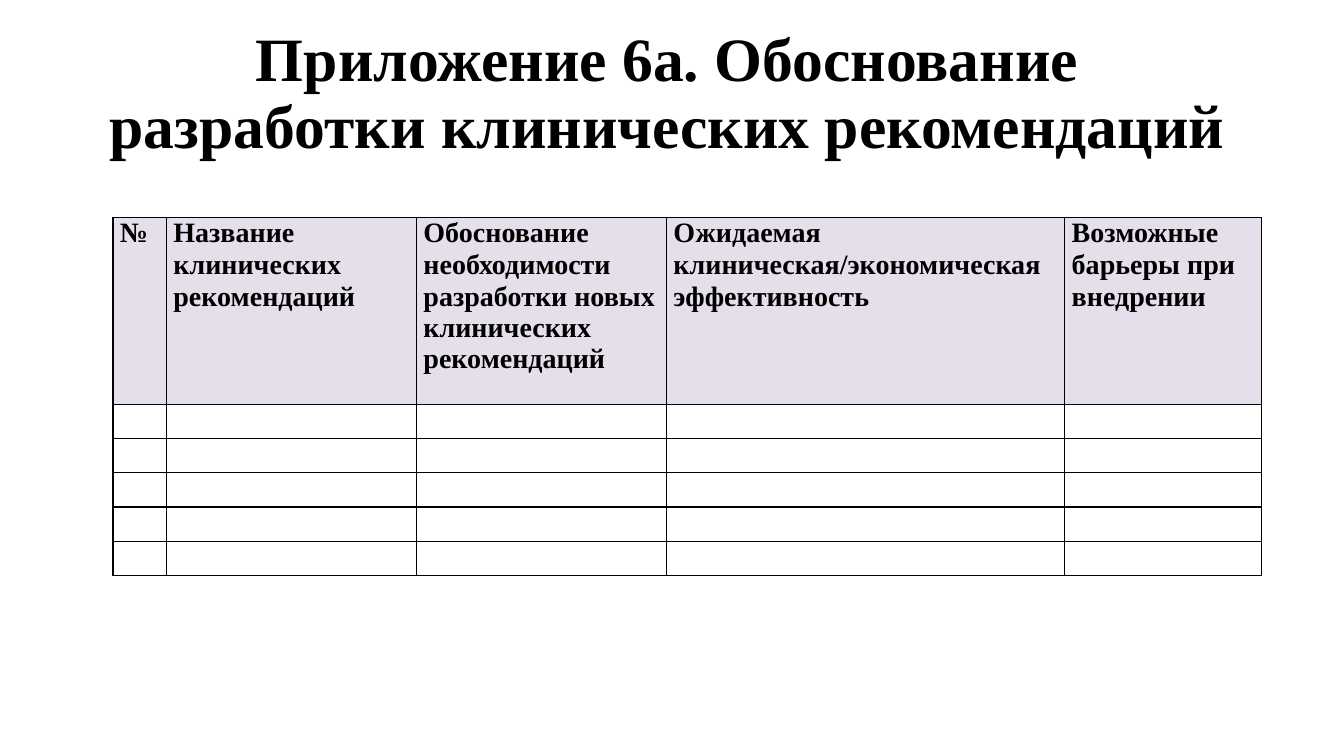
import pptx
import pptx.dml.color
import pptx.enum.text
import pptx.oxml
import pptx.util
from pptx.util import Inches


def color(value):
    return pptx.dml.color.RGBColor.from_string(value)


def write(frame, text, size, align=pptx.enum.text.PP_ALIGN.LEFT, line_spacing=1.0, space_before=0):
    frame.text = text
    for index, paragraph in enumerate(frame.paragraphs):
        paragraph.alignment = align
        paragraph.line_spacing = line_spacing
        paragraph.space_before = pptx.util.Pt(space_before if index else 0)
        font = paragraph.runs[0].font
        font.name = "Times New Roman"
        font.size = pptx.util.Pt(size)
        font.bold = True
        font.color.rgb = color("000000")


presentation = pptx.Presentation()
presentation.slide_width = Inches(13.33)
presentation.slide_height = Inches(7.5)
slide = presentation.slides.add_slide(presentation.slide_layouts[5])

title = slide.shapes.title
title.left, title.top = Inches(0.87), Inches(0.22)
title.width, title.height = Inches(11.5), Inches(1.45)
title.text_frame.word_wrap = True
title.text_frame.auto_size = pptx.enum.text.MSO_AUTO_SIZE.NONE
title.text_frame.vertical_anchor = pptx.enum.text.MSO_ANCHOR.MIDDLE
write(
    title.text_frame,
    "Приложение 6а. Обоснование разработки клинических рекомендаций",
    size=44,
    align=pptx.enum.text.PP_ALIGN.CENTER,
    line_spacing=0.9,
)

headings = [
    "№",
    "Название\nклинических рекомендаций",
    "Обоснование\nнеобходимости разработки новых клинических рекомендаций",
    "Ожидаемая\nклиническая/экономическая эффективность",
    "Возможные\nбарьеры при внедрении",
]
column_widths = [0.53, 2.48, 2.48, 3.95, 1.95]
row_heights = [1.85] + [0.34] * 5

table = slide.shapes.add_table(
    len(row_heights), len(column_widths), Inches(1.12), Inches(2.16),
    Inches(sum(column_widths)), Inches(sum(row_heights)),
).table
table.horz_banding = False
for column, width in zip(table.columns, column_widths):
    column.width = Inches(width)
for row, height in zip(table.rows, row_heights):
    row.height = Inches(height)

for cell in table.iter_cells():
    cell.margin_left = Inches(0.07)
    cell.margin_right = cell.margin_top = cell.margin_bottom = 0
    properties = cell._tc.get_or_add_tcPr()
    for side in ("lnL", "lnR", "lnT", "lnB"):
        properties.append(pptx.oxml.parse_xml(
            f'<a:{side} xmlns:a="http://schemas.openxmlformats.org/drawingml/2006/main" w="12700">'
            f'<a:solidFill><a:srgbClr val="000000"/></a:solidFill></a:{side}>'
        ))
    cell.fill.solid()
    cell.fill.fore_color.rgb = color("FFFFFF")

for cell, heading in zip(table.rows[0].cells, headings):
    cell.fill.fore_color.rgb = color("E5DFEC")
    write(cell.text_frame, heading, size=20, space_before=0.8)

presentation.save("out.pptx")
